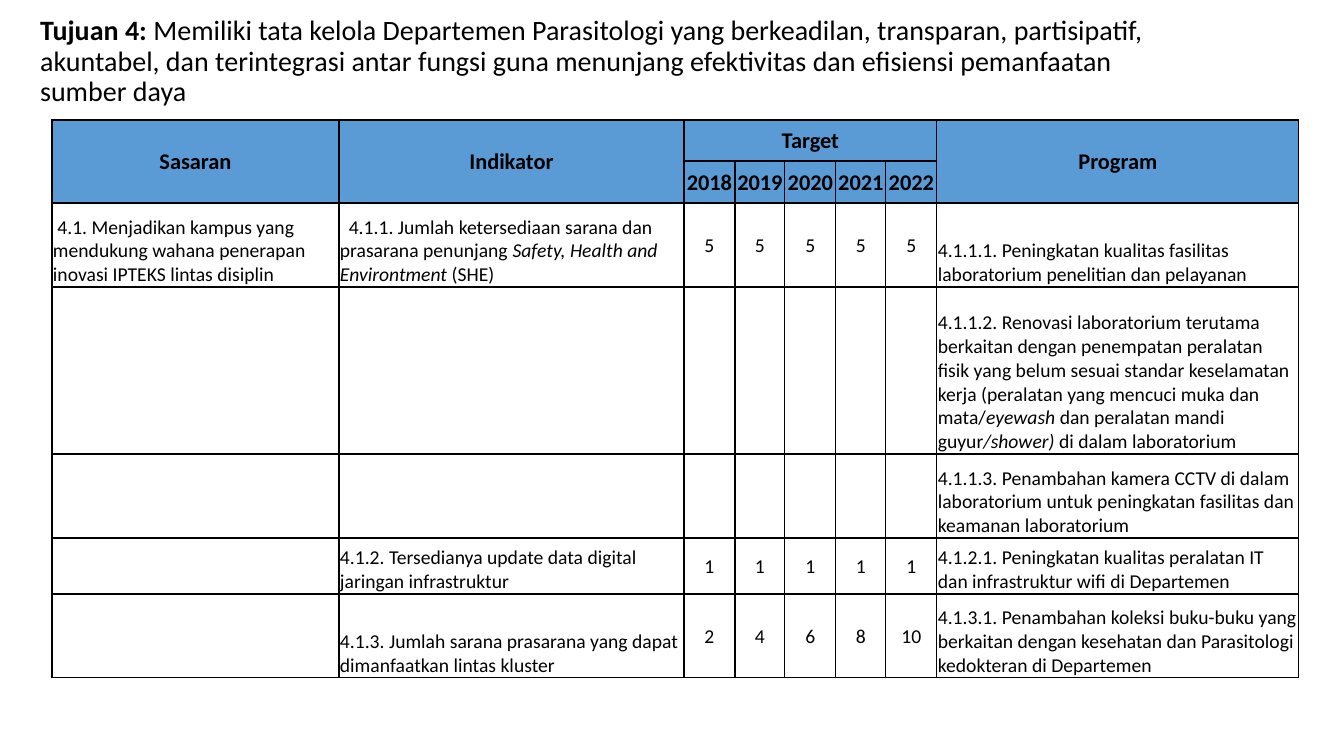
"""Build the slide with the targets and programmes of goal 4."""
from lxml.etree import SubElement
from pptx import Presentation
from pptx.dml.color import RGBColor
from pptx.enum.text import MSO_ANCHOR, MSO_AUTO_SIZE, PP_ALIGN
from pptx.oxml.ns import qn
from pptx.util import Emu, Pt

COLOURS = {"ink": "000000", "header": "5B9BD5"}
TITLE = ("Tujuan 4: ", "Memiliki tata kelola Departemen Parasitologi yang berkeadilan, transparan, "
         "partisipatif, akuntabel, dan terintegrasi antar fungsi guna menunjang efektivitas dan "
         "efisiensi pemanfaatan sumber daya")
COLUMN_WIDTHS = [287, 345, 51, 50, 51, 50, 51, 362]
ROW_HEIGHTS = [41, 42, 84, 167, 84, 56, 84]
YEARS = range(2, 7)
HEADER_ROWS = 2
BLANK_YEARS = [""] * len(YEARS)
ROWS = [
    ["Sasaran", "Indikator", "Target", "", "", "", "", "Program"],
    ["", "", "2018", "2019", "2020", "2021", "2022", ""],
    [" 4.1. Menjadikan kampus yang mendukung wahana penerapan inovasi IPTEKS lintas disiplin",
     "  4.1.1. Jumlah ketersediaan sarana dan prasarana penunjang "
     "*Safety, Health and Environtment *(SHE)",
     *["5"] * 5,
     "4.1.1.1. Peningkatan kualitas fasilitas laboratorium penelitian dan pelayanan"],
    ["", "", *BLANK_YEARS,
     "4.1.1.2. Renovasi laboratorium terutama berkaitan dengan penempatan peralatan fisik yang "
     "belum sesuai standar keselamatan kerja (peralatan yang mencuci muka dan mata/*eyewash *"
     "dan peralatan mandi guyur*/shower) *di dalam laboratorium"],
    ["", "", *BLANK_YEARS,
     "4.1.1.3. Penambahan kamera CCTV di dalam laboratorium untuk peningkatan fasilitas dan "
     "keamanan laboratorium"],
    ["", "4.1.2. Tersedianya update data digital jaringan infrastruktur",
     *["1"] * 5,
     "4.1.2.1. Peningkatan kualitas peralatan IT dan infrastruktur wifi di Departemen"],
    ["", "4.1.3. Jumlah sarana prasarana yang dapat dimanfaatkan lintas kluster",
     "2", "4", "6", "8", "10",
     "4.1.3.1. Penambahan koleksi buku-buku yang berkaitan dengan kesehatan dan Parasitologi "
     "kedokteran di Departemen"],
]
MERGES = [(0, 0, 1, 0), (0, 1, 1, 1), (0, 2, 0, 6), (0, 7, 1, 7)]


def px(length):
    """Turn pixels into EMU."""
    return Emu(round(length * 914400 / 100.8))


def apply(target, values):
    """Set attributes from a dict of format values."""
    for name, value in values.items():
        setattr(target, name, value)


class GoalPage:
    """Hold the style and the current slide."""

    def __init__(self, deck):
        """Add a title-only slide to the deck."""
        self.page = deck.slides.add_slide(deck.slide_layouts[5])
        self.font = "Calibri"

    def span(self, para, text, **values):
        """Add one formatted run."""
        span = para.add_run()
        span.text = text
        apply(span.font, {"name": self.font, **values})
        span.font.color.rgb = RGBColor.from_string(COLOURS["ink"])

    def title(self, left, top, width, height, lead, rest):
        """Place the title with its bold lead."""
        box = self.page.shapes.title
        apply(box, {"left": px(left), "top": px(top), "width": px(width), "height": px(height)})
        apply(box.text_frame, {"word_wrap": True, "auto_size": MSO_AUTO_SIZE.NONE,
                               "vertical_anchor": MSO_ANCHOR.MIDDLE})
        para = box.text_frame.paragraphs[0]
        apply(para, {"alignment": PP_ALIGN.LEFT, "line_spacing": 0.9})
        self.span(para, lead, size=Pt(20), bold=True)
        self.span(para, rest, size=Pt(20), bold=False)

    def borders(self, cell):
        """Draw thin lines on all sides of a cell."""
        properties = cell._tc.get_or_add_tcPr()
        for side in ("lnL", "lnR", "lnT", "lnB"):
            line = SubElement(properties, qn(f"a:{side}"), w=str(Pt(1)))
            fill = SubElement(line, qn("a:solidFill"))
            SubElement(fill, qn("a:srgbClr"), val=COLOURS["ink"])

    def cell(self, cell, text, header, centred):
        """Fill and format one table cell."""
        self.borders(cell)
        if header:
            cell.fill.solid()
            cell.fill.fore_color.rgb = RGBColor.from_string(COLOURS["header"])
        else:
            cell.fill.background()
        apply(cell, {"margin_left": px(1), "margin_right": px(1), "margin_top": px(1),
                     "margin_bottom": 0,
                     "vertical_anchor": MSO_ANCHOR.MIDDLE if centred else MSO_ANCHOR.BOTTOM})
        para = cell.text_frame.paragraphs[0]
        para.alignment = PP_ALIGN.CENTER if centred else PP_ALIGN.LEFT
        for index, part in enumerate(text.split("*")):
            if part:
                self.span(para, part, size=Pt(16 if header else 14), bold=header,
                          italic=index % 2 == 1)

    def table(self, left, top, widths, heights, rows):
        """Add the table of goals, indicators, targets and programmes."""
        table = self.page.shapes.add_table(len(heights), len(widths), px(left), px(top),
                                           px(sum(widths)), px(sum(heights))).table
        apply(table, {"first_row": False, "horz_banding": False})
        for column, width in zip(table.columns, widths):
            column.width = px(width)
        for row, height in zip(table.rows, heights):
            row.height = px(height)
        for row_index, texts in enumerate(rows):
            header = row_index < HEADER_ROWS
            for column_index, text in enumerate(texts):
                self.cell(table.cell(row_index, column_index), text, header,
                          header or column_index in YEARS)
        for first_row, first_column, last_row, last_column in MERGES:
            table.cell(first_row, first_column).merge(table.cell(last_row, last_column))


def main():
    """Build and save the deck."""
    deck = Presentation()
    apply(deck, {"slide_width": px(1344), "slide_height": px(756)})
    goal = GoalPage(deck)
    goal.title(30, 18, 1169, 88, *TITLE)
    goal.table(52, 120, COLUMN_WIDTHS, ROW_HEIGHTS, ROWS)
    deck.save("out.pptx")


if __name__ == "__main__":
    main()
